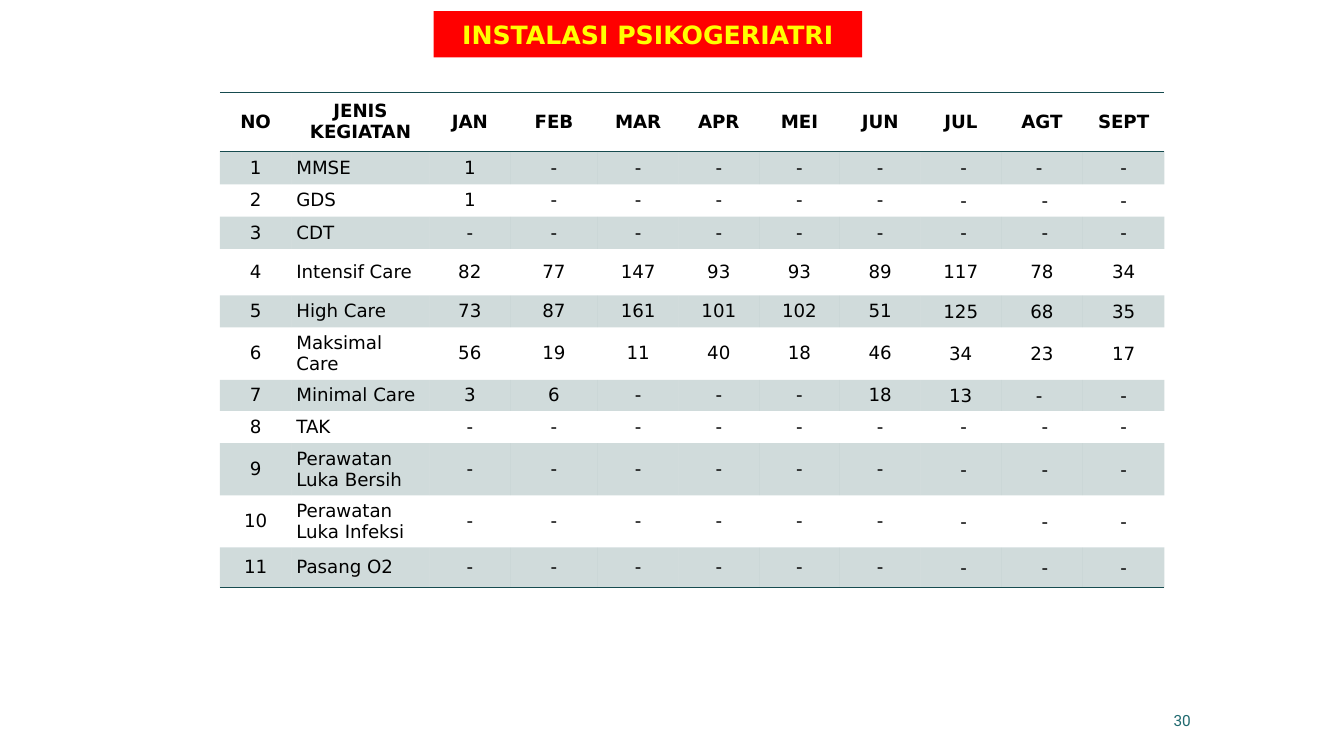
from lxml import etree
from pptx import Presentation
from pptx.dml.color import RGBColor
from pptx.enum import shapes, text
from pptx.oxml import parse_xml
from pptx.oxml.ns import nsdecls, qn
from pptx.util import Inches, Pt

TEAL = RGBColor(0x16, 0x4B, 0x4F)
BLUE = RGBColor(0x1F, 0x69, 0x6F)
RED = RGBColor(0xFF, 0x00, 0x00)
YELLOW = RGBColor(0xFF, 0xFF, 0x00)
BLACK = RGBColor(0x00, 0x00, 0x00)
PLAIN = "{2D5ABB26-0587-4C30-8999-92F81FD0307C}"
NONE = ["-"] * 9

HEAD = "NO|JENIS KEGIATAN|JAN|FEB|MAR|APR|MEI|JUN|JUL|AGT|SEPT".split("|")
CARE = [
    ("MMSE", ["1"] + NONE[1:]),
    ("GDS", ["1"] + NONE[1:]),
    ("CDT", NONE),
    ("Intensif Care", "82 77 147 93 93 89 117 78 34".split()),
    ("High Care", "73 87 161 101 102 51 125 68 35".split()),
    ("Maksimal Care", "56 19 11 40 18 46 34 23 17".split()),
    ("Minimal Care", "3 6 - - - 18 13 - -".split()),
    ("TAK", NONE),
    ("Perawatan Luka Bersih", NONE),
    ("Perawatan Luka Infeksi", NONE),
    ("Pasang O2", NONE),
]
WIDTHS = [0.71, 1.37, 0.8, 0.87] + [0.8] * 5 + [0.81] * 2
HEIGHTS = [0.58, 0.33, 0.32, 0.32, 0.46, 0.32, 0.52, 0.27, 0.32, 0.41, 0.39, 0.4]


def write(frame, words, align, **style):
    frame.text = words
    para = frame.paragraphs[0]
    para.alignment = align
    font = para.runs[0].font
    font.color.rgb = style.pop("color")
    for key, val in style.items():
        setattr(font, key, val)


def rule(cell, side, place):
    """Draw a 1 pt line on the top (lnT) or bottom (lnB) of a cell."""
    cell._tc.get_or_add_tcPr().insert(place, parse_xml(
        f'<a:{side} {nsdecls("a")} w="12700"><a:solidFill>'
        f'<a:srgbClr val="{TEAL}"/></a:solidFill></a:{side}>'))


prs = Presentation()
prs.slide_width, prs.slide_height = Inches(13.33), Inches(7.5)
slide = prs.slides.add_slide(prs.slide_layouts[5])

# Title
title = slide.shapes.title
title.left, title.top = Inches(4.3), Inches(0.11)
title.width, title.height = Inches(4.25), Inches(0.46)
title._element.spPr.append(parse_xml(
    f'<a:prstGeom {nsdecls("a")} prst="roundRect"><a:avLst/></a:prstGeom>'))
title.fill.solid()
title.fill.fore_color.rgb = RED
frame = title.text_frame
frame.auto_size = text.MSO_AUTO_SIZE.NONE
frame.vertical_anchor = text.MSO_ANCHOR.MIDDLE
write(frame, "INSTALASI PSIKOGERIATRI", text.PP_ALIGN.CENTER,
      name="DejaVu Sans", size=Pt(18), bold=True, color=YELLOW)

# Activity table
rows = [HEAD] + [[str(n), name, *vals] for n, (name, vals) in enumerate(CARE, 1)]
holder = slide.shapes.add_table(len(rows), len(HEAD), Inches(2.18), Inches(0.92),
                                Inches(sum(WIDTHS)), Inches(sum(HEIGHTS)))
table = holder.table
table.horz_banding = False
table._tbl.tblPr.find(qn("a:tableStyleId")).text = PLAIN
for col, width in zip(table.columns, WIDTHS):
    col.width = Inches(width)
for row, height in zip(table.rows, HEIGHTS):
    row.height = Inches(height)

for r, row in enumerate(rows):
    for c, words in enumerate(row):
        cell = table.cell(r, c)
        cell.vertical_anchor = text.MSO_ANCHOR.MIDDLE
        tight = r > 0 and c > 7
        pad = Inches(0.01 if tight else 0.05)
        cell.margin_left = cell.margin_right = cell.margin_top = pad
        cell.margin_bottom = 0 if tight else pad
        if words == "-" and c in (8, 9):
            words = "- " if c == 9 and r in (1, 7) else " -"
        left = r > 0 and c == 1
        write(cell.text_frame, words,
              text.PP_ALIGN.LEFT if left else text.PP_ALIGN.CENTER,
              name="DejaVu Sans", size=Pt(13), bold=r == 0, color=BLACK)
        if r % 2:
            cell.fill.solid()
            cell.fill.fore_color.rgb = TEAL
            tint = cell._tc.tcPr.find(".//" + qn("a:srgbClr"))
            etree.SubElement(tint, qn("a:alpha"), val="20000")
        else:
            cell.fill.background()
        if r in (0, len(rows) - 1):
            rule(cell, "lnB", 0)
        if r == 0:
            rule(cell, "lnT", 0)

# Page number
page = slide.shapes.add_textbox(Inches(8.8), Inches(6.95), Inches(3.11), Inches(0.4))
page.text_frame.word_wrap = True
page.text_frame.vertical_anchor = text.MSO_ANCHOR.MIDDLE
write(page.text_frame, "30", text.PP_ALIGN.RIGHT,
      name="Roboto", size=Pt(11), color=BLUE)

prs.save("out.pptx")
